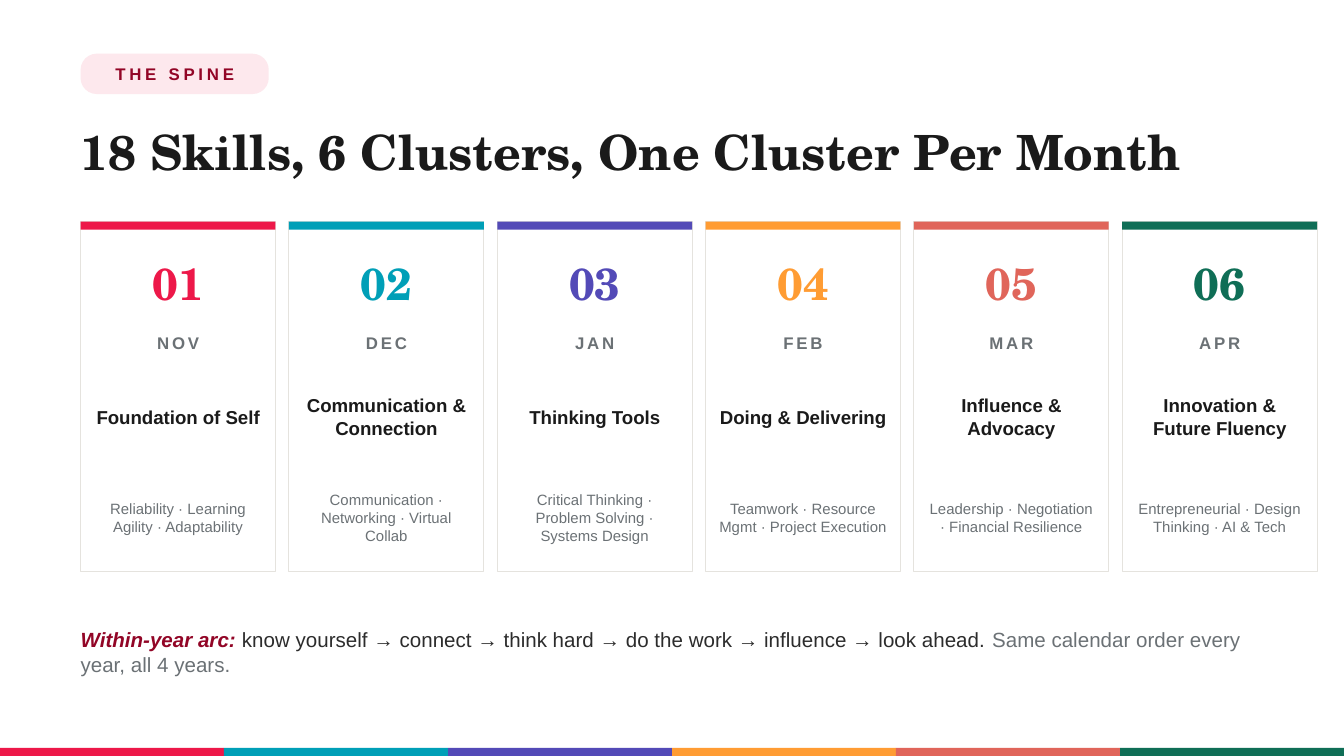
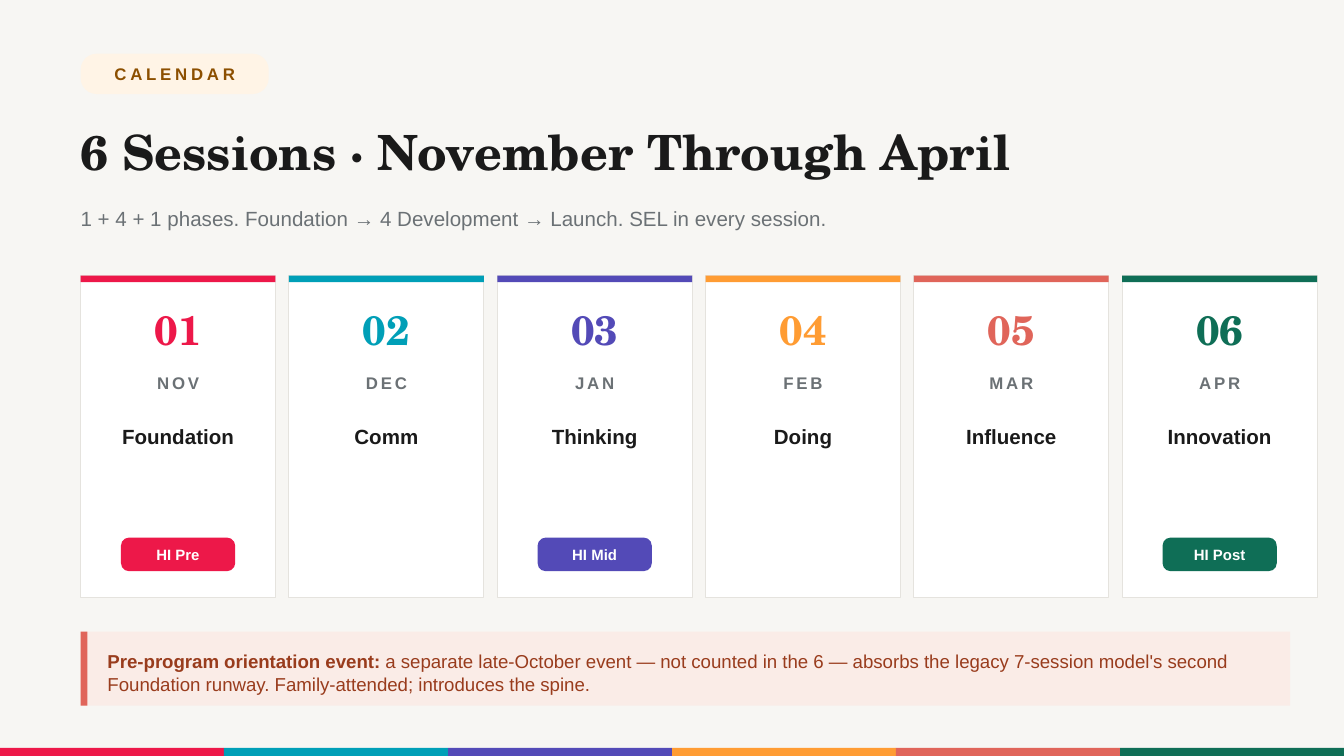
"""Builds two slides: the six skill clusters and the calendar of six sessions."""
from pptx import Presentation
from pptx.dml.color import RGBColor
from pptx.enum.shapes import MSO_SHAPE
from pptx.enum.text import MSO_ANCHOR, PP_ALIGN
from pptx.util import Inches, Pt

COLORS = {
    "red": "ED1849", "teal": "009FB7", "violet": "534AB7",
    "orange": "FF9C33", "coral": "E0655A", "green": "0F6E56",
    "white": "FFFFFF", "paper": "F7F6F3", "border": "E5E3DE",
    "ink": "1A1A1A", "body": "2C2C2C", "gray": "6B7175",
    "maroon": "920526", "blush": "FDE8ED",
    "brown": "8C4F00", "cream": "FFF4E6",
    "rust": "993C1D", "peach": "FAECE7",
}
SANS, SERIF = "Arial", "TeX Gyre Schola"
WIDTH, HEIGHT = 10, 10 * 9 / 16
MARGIN, CONTENT_WIDTH = 0.6, 9
CARD_WIDTH, CARD_GAP = 1.45, 0.1
STRIP_HEIGHT = 0.06

MONTHS = [("NOV", "red"), ("DEC", "teal"), ("JAN", "violet"),
          ("FEB", "orange"), ("MAR", "coral"), ("APR", "green")]

CLUSTERS = [
    ("Foundation of Self", "Reliability · Learning Agility · Adaptability"),
    ("Communication & Connection", "Communication · Networking · Virtual Collab"),
    ("Thinking Tools", "Critical Thinking · Problem Solving · Systems Design"),
    ("Doing & Delivering", "Teamwork · Resource Mgmt · Project Execution"),
    ("Influence & Advocacy", "Leadership · Negotiation · Financial Resilience"),
    ("Innovation & Future Fluency", "Entrepreneurial · Design Thinking · AI & Tech"),
]
ARC = [
    ("Within-year arc: ", "maroon", True),
    ("know yourself → connect → think hard → do the work → influence → look ahead. ",
     "body", False),
    ("Same calendar order every year, all 4 years.", "gray", False),
]

SESSIONS = [("Foundation", "HI Pre"), ("Comm", None), ("Thinking", "HI Mid"),
            ("Doing", None), ("Influence", None), ("Innovation", "HI Post")]
PHASES = "1 + 4 + 1 phases. Foundation → 4 Development → Launch. SEL in every session."
ORIENTATION = [
    ("Pre-program orientation event: ", True),
    ("a separate late-October event — not counted in the 6 — absorbs the legacy "
     "7-session model's second Foundation runway. Family-attended; introduces the spine.",
     False),
]


def rgb(name):
    return RGBColor.from_string(COLORS[name])


def add_block(page, area, fill, border=None, radius=None):
    kind = MSO_SHAPE.RECTANGLE if radius is None else MSO_SHAPE.ROUNDED_RECTANGLE
    block = page.shapes.add_shape(kind, *map(Inches, area))
    block.shadow.inherit = False
    block.fill.solid()
    block.fill.fore_color.rgb = rgb(fill)
    if radius is not None:
        block.adjustments[0] = radius
    if border:
        block.line.color.rgb = rgb(border)
        block.line.width = Pt(0.5)
    else:
        block.line.fill.background()
    return block


def open_text(shape, size, color, font=SANS, bold=False, centered=False):
    frame = shape.text_frame
    frame.word_wrap = True
    frame.vertical_anchor = MSO_ANCHOR.MIDDLE
    frame.margin_left = frame.margin_right = frame.margin_top = frame.margin_bottom = 0
    para = frame.paragraphs[0]
    para.alignment = PP_ALIGN.CENTER if centered else PP_ALIGN.LEFT
    para.font.name = font
    para.font.size = Pt(size)
    para.font.bold = bold
    para.font.color.rgb = rgb(color)
    return para


def add_span(para, text, spacing=0):
    span = para.add_run()
    span.text = text
    if spacing:
        span.font._element.set("spc", str(int(spacing * 100)))
    return span


def add_box(page, area):
    return page.shapes.add_textbox(*map(Inches, area))


def add_label(page, area, text, size, color, spacing=0, **style):
    add_span(open_text(add_box(page, area), size, color, **style), text, spacing)


def add_pill(page, area, text, size, color, fill, radius, spacing=0):
    pill = add_block(page, area, fill, radius=radius)
    add_span(open_text(pill, size, color, bold=True, centered=True), text, spacing)


def add_page(deck, background, tag, tag_color, tag_fill, title):
    page = deck.slides.add_slide(deck.slide_layouts[6])
    page.background.fill.solid()
    page.background.fill.fore_color.rgb = rgb(background)
    add_pill(page, (MARGIN, 0.4, 1.4, 0.3), tag, 9, tag_color, tag_fill, 0.4, spacing=2)
    add_label(page, (MARGIN, 0.85, CONTENT_WIDTH, 0.55), title, 26, "ink",
              font=SERIF, bold=True)
    strip_width = WIDTH / len(MONTHS)
    for index, (_, color) in enumerate(MONTHS):
        add_block(page, (index * strip_width, HEIGHT - STRIP_HEIGHT,
                         strip_width, STRIP_HEIGHT), color)
    return page


def add_cards(page, top, height, band, number_top, number_size, month_top):
    """Draws the six month cards and returns the left edge and colour of each."""
    cards = []
    for index, (month, color) in enumerate(MONTHS):
        left = MARGIN + index * (CARD_WIDTH + CARD_GAP)
        add_block(page, (left, top, CARD_WIDTH, height), "white", border="border")
        add_block(page, (left, top, CARD_WIDTH, band), color)
        add_label(page, (left, number_top, CARD_WIDTH, 0.5), f"{index + 1:02}",
                  number_size, color, font=SERIF, bold=True, centered=True)
        add_label(page, (left, month_top, CARD_WIDTH, 0.3), month, 9, "gray",
                  spacing=1.5, bold=True, centered=True)
        cards.append((left, color))
    return cards


def build_spine(deck):
    page = add_page(deck, "white", "THE SPINE", "maroon", "blush",
                    "18 Skills, 6 Clusters, One Cluster Per Month")
    cards = add_cards(page, 1.65, 2.6, 0.06, 1.85, 24, 2.4)
    inset = 0.1
    for (left, _), (cluster, skills) in zip(cards, CLUSTERS):
        inner_left, inner_width = left + inset, CARD_WIDTH - 2 * inset
        add_label(page, (inner_left, 2.75, inner_width, 0.7), cluster, 10, "ink",
                  bold=True, centered=True)
        add_label(page, (inner_left, 3.5, inner_width, 0.7), skills, 8, "gray",
                  centered=True)
    para = open_text(add_box(page, (MARGIN, 4.6, CONTENT_WIDTH, 0.5)), 11, "body")
    for text, color, strong in ARC:
        span = add_span(para, text)
        span.font.color.rgb = rgb(color)
        span.font.bold = span.font.italic = strong


def build_calendar(deck):
    page = add_page(deck, "paper", "CALENDAR", "brown", "cream",
                    "6 Sessions · November Through April")
    add_label(page, (MARGIN, 1.45, CONTENT_WIDTH, 0.35), PHASES, 11, "gray")
    cards = add_cards(page, 2.05, 2.4, 0.05, 2.2, 22, 2.7)
    pill_width = 0.85
    for (left, color), (session, survey) in zip(cards, SESSIONS):
        add_label(page, (left, 3.05, CARD_WIDTH, 0.4), session, 11, "ink",
                  bold=True, centered=True)
        if survey:
            pill_left = left + (CARD_WIDTH - pill_width) / 2
            add_pill(page, (pill_left, 4, pill_width, 0.25), survey, 8, "white",
                     color, 0.24)
    add_block(page, (MARGIN, 4.7, CONTENT_WIDTH, 0.55), "peach")
    add_block(page, (MARGIN, 4.7, 0.05, 0.55), "coral")
    para = open_text(add_box(page, (0.8, 4.78, 8.7, 0.45)), 10, "rust")
    for text, strong in ORIENTATION:
        add_span(para, text).font.bold = strong


def main():
    deck = Presentation()
    deck.slide_width, deck.slide_height = Inches(WIDTH), Inches(HEIGHT)
    build_spine(deck)
    build_calendar(deck)
    deck.save("out.pptx")


if __name__ == "__main__":
    main()
